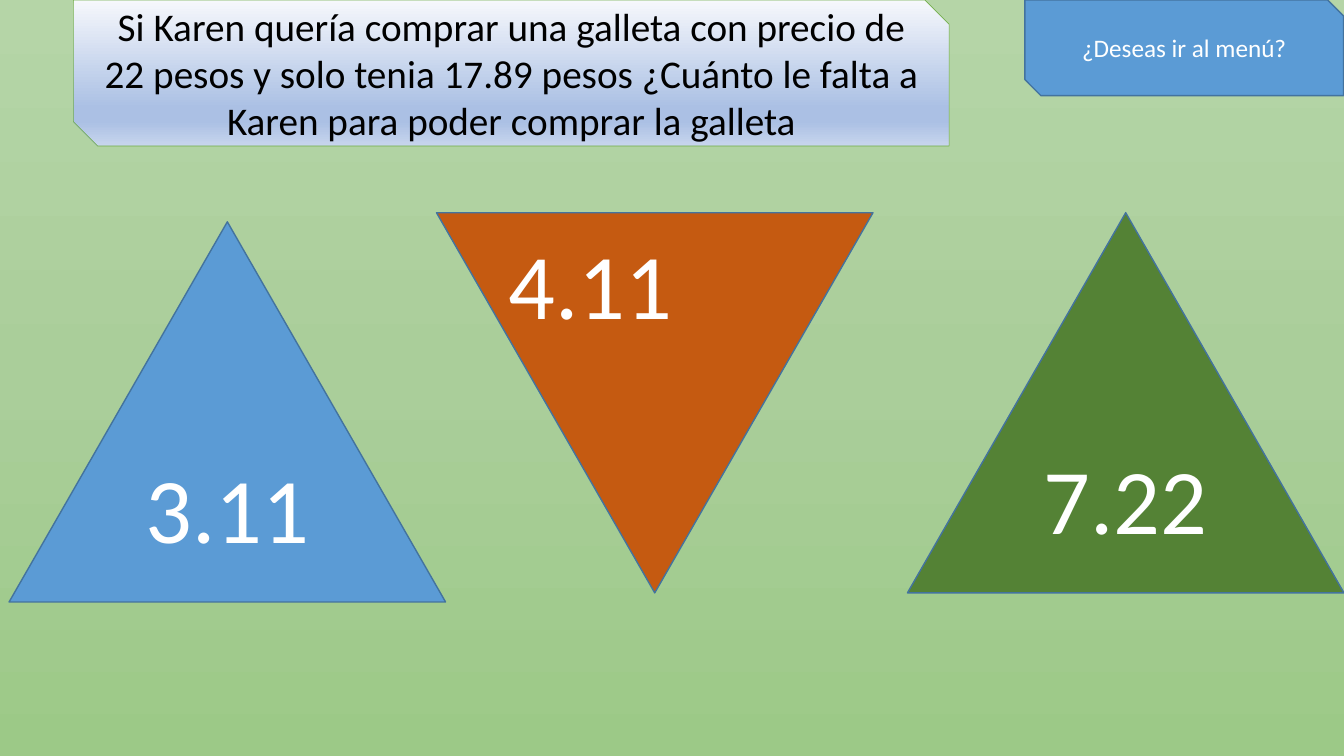
from lxml import etree
from pptx import Presentation
from pptx.dml.color import RGBColor
from pptx.enum.shapes import MSO_SHAPE
from pptx.enum.text import MSO_ANCHOR, MSO_AUTO_SIZE, PP_ALIGN
from pptx.oxml.ns import qn
from pptx.util import Cm, Pt

SNIP = MSO_SHAPE.SNIP_2_DIAG_RECTANGLE
CONE = MSO_SHAPE.ISOSCELES_TRIANGLE
MIDDLE, TOP = MSO_ANCHOR.MIDDLE, MSO_ANCHOR.TOP
CENTER, LEFT = PP_ALIGN.CENTER, PP_ALIGN.LEFT
GROW = MSO_AUTO_SIZE.SHAPE_TO_FIT_TEXT

COLORS = {
    "blue": "5B9BD5", "edge": "43739E", "orange": "C55A11",
    "green": "548235", "rim": "70AD47", "black": "000000", "white": "FFFFFF",
}
MEADOW = [(0, "B5D5A7"), (50, "AACE9A"), (100, "9CC987")]
SKY = [(0, "F6F8FC"), (74, "ABC0E4"), (83, "ABC0E4"), (100, "C7D5ED")]


def color(name):
    return RGBColor.from_string(COLORS[name])


class Board:
    """Holds the slide and its text style."""

    def __init__(self, slide, font):
        self.slide = slide
        self.font = font

    def fade(self, fill, root, stops):
        """Apply a top-down gradient with any number of stops."""
        fill.gradient()
        fill.gradient_angle = 270
        stop_list = root.find(".//" + qn("a:gsLst"))
        for old in list(stop_list):
            stop_list.remove(old)
        for place, tone in stops:
            stop = etree.SubElement(stop_list, qn("a:gs"), pos=str(place * 1000))
            etree.SubElement(stop, qn("a:srgbClr"), val=tone)

    def ground(self, stops):
        self.fade(self.slide.background.fill, self.slide.element, stops)

    def letter(self, shape, text, size, tone, align, anchor):
        frame = shape.text_frame
        frame.word_wrap = True
        frame.vertical_anchor = anchor
        frame.text = text
        line = frame.paragraphs[0]
        line.alignment = align
        font = line.runs[0].font
        font.name, font.size = self.font, Pt(size)
        font.color.rgb = color(tone)

    def shape(self, kind, box, fill, text="", size=66, tone="white",
              edge="edge", width=1, turn=0):
        shape = self.slide.shapes.add_shape(kind, *map(Cm, box))
        shape.shadow.inherit = False
        shape.rotation = turn
        if isinstance(fill, list):
            self.fade(shape.fill, shape.element, fill)
        else:
            shape.fill.solid()
            shape.fill.fore_color.rgb = color(fill)
        shape.line.color.rgb = color(edge)
        shape.line.width = Pt(width)
        if text:
            self.letter(shape, text, size, tone, CENTER, MIDDLE)

    def label(self, box, text, size=66, tone="white"):
        shape = self.slide.shapes.add_textbox(*map(Cm, box))
        self.letter(shape, text, size, tone, LEFT, TOP)
        shape.text_frame.auto_size = GROW


def main():
    deck = Presentation()
    deck.slide_width, deck.slide_height = Cm(33.87), Cm(19.05)
    board = Board(deck.slides.add_slide(deck.slide_layouts[6]), "Calibri")
    board.ground(MEADOW)

    # Question
    board.shape(
        SNIP, (1.85, 0, 22.07, 3.68), SKY,
        "Si Karen quería comprar una galleta con precio de 22 pesos y solo "
        "tenia 17.89 pesos ¿Cuánto le falta a Karen para poder comprar la galleta",
        size=28, tone="black", edge="rim", width=0.5)

    # Answers
    size = (11, 9.58)
    board.shape(CONE, (0.23, 5.59, *size), "blue", "3.11")
    board.shape(CONE, (11, 5.36, *size), "orange", turn=180)
    board.label((12.57, 5.59, 7.85, 3.07), "4.11")
    board.shape(CONE, (22.87, 5.36, *size), "green", "7.22")

    # Menu button
    board.shape(SNIP, (25.83, 0, 8.03, 2.41), "blue",
                "¿Deseas ir al menú?", size=18)

    deck.save("out.pptx")


if __name__ == "__main__":
    main()
